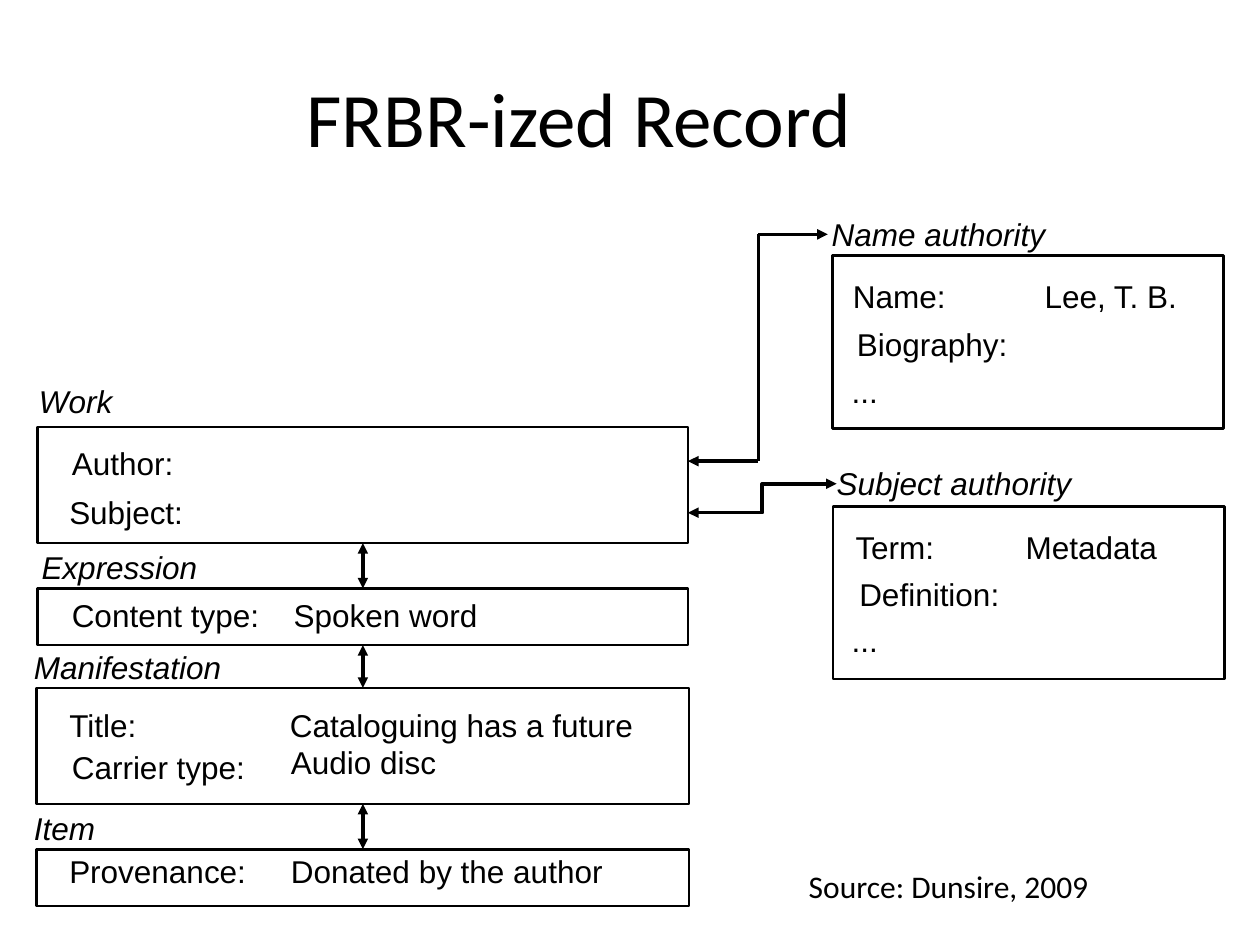
from itertools import pairwise

from lxml import etree
from pptx import Presentation
from pptx import util as u
from pptx.dml.color import RGBColor
from pptx.enum import shapes, text
from pptx.oxml.ns import qn

BLACK = RGBColor(0, 0, 0)
TEXT_HEIGHT = 0.31

# Name, its offset and width; box left, top, width, height;
# then the fields: text, offset from the box's left and top, width.
ENTITIES = [
    ("Work", (0.01, -0.36, 1.63), (0.3, 3.39, 5.16, 0.92), [
        ("Author:", 0.27, 0.13, 0.83),
        ("Subject:", 0.25, 0.52, 0.94),
    ]),
    ("Expression", (0.03, -0.32, 1.33), (0.3, 4.67, 5.16, 0.45), [
        ("Content type:", 0.27, 0.06, 1.54),
        ("Spoken word", 2.03, 0.06, 1.51),
    ]),
    ("Manifestation", (-0.02, -0.32, 1.63), (0.29, 5.46, 5.18, 0.92), [
        ("Title:", 0.26, 0.14, 0.54),
        ("Cataloguing has a future", 2.01, 0.14, 2.82),
        ("Carrier type:", 0.28, 0.48, 1.42),
        ("Audio disc", 2.02, 0.44, 1.23),
    ]),
    ("Item", (-0.02, -0.32, 0.56), (0.29, 6.74, 5.18, 0.45), [
        ("Provenance:", 0.26, 0.02, 1.43),
        ("Donated by the author", 2.02, 0.02, 2.57),
    ]),
]
AUTHORITIES = [
    ("Name authority", (-0.01, -0.32, 1.8), (6.61, 2.03, 3.1, 1.37), [
        ("Name:", 0.16, 0.17, 0.76),
        ("Lee, T. B.", 1.68, 0.17, 1.07),
        ("Biography:", 0.19, 0.55, 1.25),
        ("...", 0.15, 0.92, 0.21),
    ]),
    ("Subject authority", (0.03, -0.34, 1.99), (6.61, 4.02, 3.11, 1.37), [
        ("Term:", 0.18, 0.17, 0.63),
        ("Metadata", 1.53, 0.17, 1.09),
        ("Definition:", 0.21, 0.54, 1.14),
        ("...", 0.15, 0.91, 0.21),
    ]),
]


def format_text(frame, words, size=18, font="Arial", italic=False, align=None):
    paragraph = frame.paragraphs[0]
    paragraph.alignment = align
    run = paragraph.add_run()
    run.text = words
    run.font.size = u.Pt(size)
    run.font.name = font
    run.font.italic = italic
    run.font.color.rgb = BLACK


def add_text(slide, words, left, top, width, height=TEXT_HEIGHT, inset=0, **format):
    box = slide.shapes.add_textbox(*map(u.Inches, (left, top, width, height)))
    frame = box.text_frame
    frame.word_wrap = False
    frame.auto_size = text.MSO_AUTO_SIZE.SHAPE_TO_FIT_TEXT
    frame.margin_left = frame.margin_right = u.Inches(inset)
    frame.margin_top = frame.margin_bottom = u.Inches(inset / 2)
    format_text(frame, words, **format)


def add_arrow(slide, start, end, kind=shapes.MSO_CONNECTOR.STRAIGHT, head=True, tail=True):
    """Draw a connector with an arrowhead at its start (head) and end (tail)."""
    connector = slide.shapes.add_connector(kind, *map(u.Inches, (*start, *end)))
    connector.line.color.rgb = BLACK
    connector.line.width = u.Pt(2)
    line = connector.line._get_or_add_ln()
    for tag, wanted in (("a:headEnd", head), ("a:tailEnd", tail)):
        if wanted:
            etree.SubElement(line, qn(tag), type="triangle")
    etree.SubElement(connector._element.spPr, qn("a:effectLst"))
    return connector


def add_record(slide, name, name_place, box, fields):
    """Draw a framed record with its name above and its fields inside."""
    left, top = box[:2]
    frame = slide.shapes.add_shape(shapes.MSO_SHAPE.RECTANGLE, *map(u.Inches, box))
    frame.shadow.inherit = False
    frame.fill.background()
    frame.line.color.rgb = BLACK
    frame.line.width = u.Pt(1.5)
    dx, dy, width = name_place
    add_text(slide, name, left + dx, top + dy, width, italic=True)
    for words, dx, dy, width in fields:
        add_text(slide, words, left + dx, top + dy, width)
    return frame


def add_entities(slide):
    frames = [add_record(slide, *entity) for entity in ENTITIES]
    for upper, lower in pairwise(frames):
        arrow = add_arrow(slide, (0, 0), (1, 1))
        arrow.begin_connect(upper, 2)
        arrow.end_connect(lower, 0)


def add_authorities(slide):
    for authority in AUTHORITIES:
        add_record(slide, *authority)
    add_arrow(slide, (5.46, 4.07), (6.64, 3.84), kind=shapes.MSO_CONNECTOR.ELBOW)
    route = [(5.46, 3.66), (6.02, 3.66), (6.02, 1.86), (6.57, 1.86)]
    for start, end in pairwise(route):
        add_arrow(slide, start, end, head=start == route[0], tail=end == route[-1])


def add_title(slide, words, box):
    title = slide.shapes.title
    title.left, title.top, title.width, title.height = map(u.Inches, box)
    title.text_frame.vertical_anchor = text.MSO_ANCHOR.MIDDLE
    format_text(title.text_frame, words, size=44, font="Calibri",
                align=text.PP_ALIGN.CENTER)


def main():
    presentation = Presentation()
    presentation.slide_width = u.Inches(10)
    presentation.slide_height = u.Inches(7.5)
    slide = presentation.slides.add_slide(presentation.slide_layouts[5])
    add_title(slide, "FRBR-ized Record", (0.5, 0.3, 8.19, 1.25))
    add_entities(slide)
    add_authorities(slide)
    add_text(slide, "Source: Dunsire, 2009", 6.32, 6.83, 2.45, 0.4,
             inset=0.1, font="Calibri")
    presentation.save("out.pptx")


if __name__ == "__main__":
    main()
